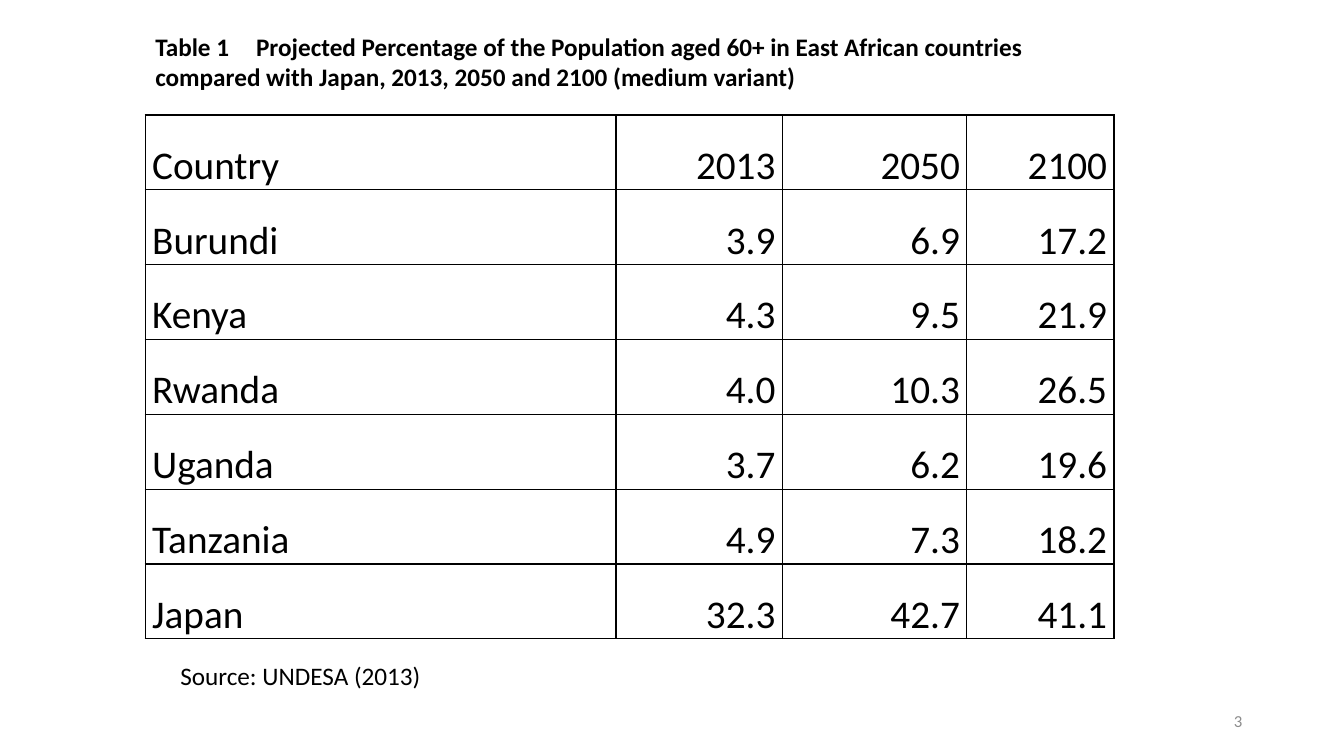
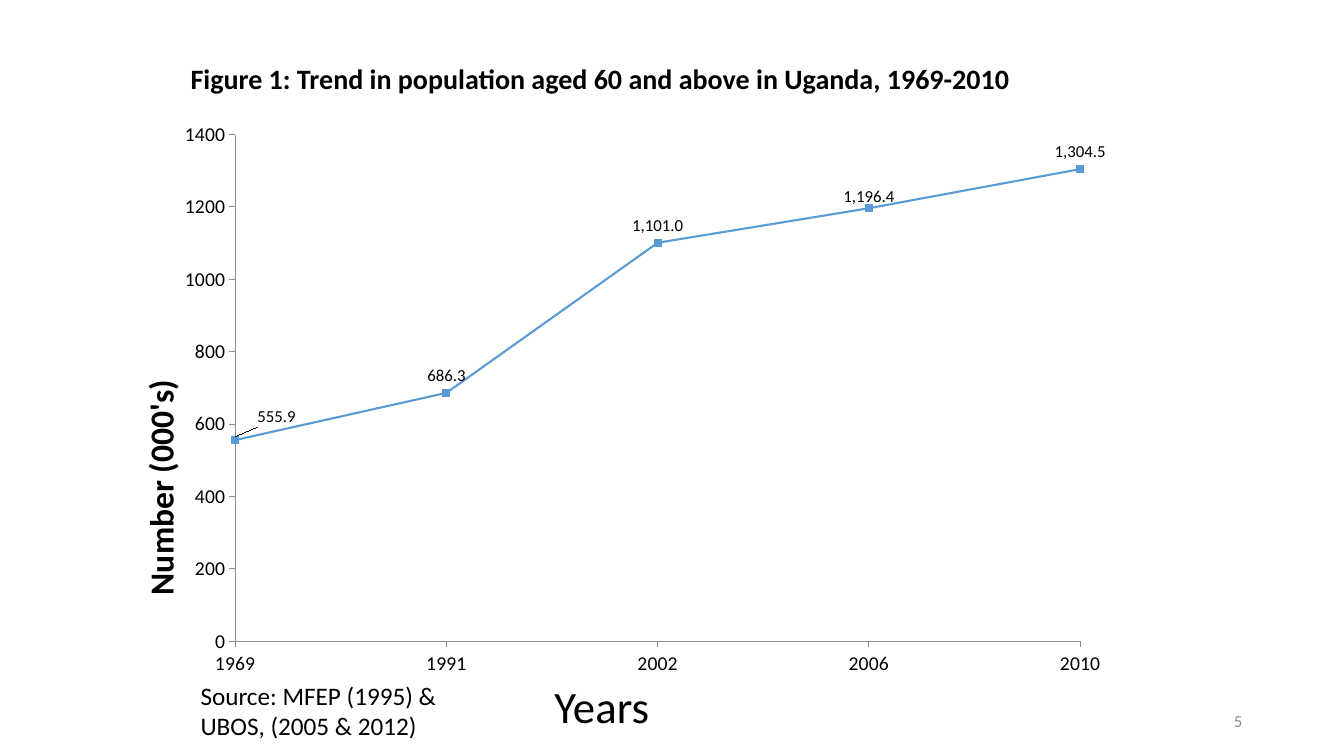
from lxml import etree
from pptx import Presentation
from pptx.chart.data import CategoryChartData
from pptx.dml.color import RGBColor
from pptx.enum import chart as ch, text as tx
from pptx.oxml import parse_xml
from pptx.oxml.ns import nsdecls, qn
from pptx.util import Pt

PX = 9144  # EMU: 100 px to the inch
FONT = "Calibri"
BLACK = RGBColor(0x00, 0x00, 0x00)
GREY = RGBColor(0x8C, 0x8C, 0x8C)
BLUE = RGBColor(0x5B, 0x9B, 0xD5)
LEFT, RIGHT = tx.PP_ALIGN.LEFT, tx.PP_ALIGN.RIGHT
TOP, MIDDLE = tx.MSO_ANCHOR.TOP, tx.MSO_ANCHOR.MIDDLE

COLS = [467, 165, 183, 146]
ROWS = [
    ("Country", "2013", "2050", "2100"),
    ("Burundi", "3.9", "6.9", "17.2"),
    ("Kenya", "4.3", "9.5", "21.9"),
    ("Rwanda", "4.0", "10.3", "26.5"),
    ("Uganda", "3.7", "6.2", "19.6"),
    ("Tanzania", "4.9", "7.3", "18.2"),
    ("Japan", "32.3", "42.7", "41.1"),
]
TREND = {"1969": 555.9, "1991": 686.3, "2002": 1101, "2006": 1196.4, "2010": 1304.5}
SHIFTS = {0: (0.04, -0.01), 3: (0, 0.01)}  # labels moved off the line


def emu(*sizes):
    return [size * PX for size in sizes]


def style(font, size, color=BLACK, bold=False):
    for key, value in {"name": FONT, "size": Pt(size), "bold": bold}.items():
        setattr(font, key, value)
    font.color.rgb = color


def write(frame, words, size, color=BLACK, bold=False, align=LEFT, anchor=TOP):
    frame.text = words
    frame.word_wrap = True
    frame.auto_size = tx.MSO_AUTO_SIZE.NONE
    frame.vertical_anchor = anchor
    for para in frame.paragraphs:
        para.alignment = align
        for run in para.runs:
            style(run.font, size, color, bold)


def note(slide, box, words, size, **look):
    shape = slide.shapes.add_textbox(*emu(*box))
    write(shape.text_frame, words, size, **look)


def page(deck, box, title, size, number):
    """Add a slide with its title and page number."""
    slide = deck.slides.add_slide(deck.slide_layouts[5])
    head = slide.shapes.title
    head.left, head.top, head.width, head.height = emu(*box)
    write(head.text_frame, title, size, bold=True)
    note(slide, (942, 695, 300, 40), number, 12, color=GREY, align=RIGHT, anchor=MIDDLE)
    return slide


def frame(cell):
    """Clear the cell's fill and draw a thin line on its four sides."""
    cell.fill.background()
    props = cell._tc.get_or_add_tcPr()
    for spot, side in enumerate("LRTB"):
        props.insert(spot, parse_xml(
            f'<a:ln{side} {nsdecls("a")} w="12700"><a:solidFill>'
            f'<a:srgbClr val="{BLACK}"/></a:solidFill></a:ln{side}>'))


def grid(slide, box, cols, rows):
    table = slide.shapes.add_table(len(rows), len(cols), *emu(*box)).table
    table.first_row = table.horz_banding = False
    for col, width in zip(table.columns, cols):
        col.width = width * PX
    for row, words in zip(table.rows, rows):
        row.height = box[3] * PX // len(rows)
        for spot, (cell, word) in enumerate(zip(row.cells, words)):
            write(cell.text_frame, word, 28, align=RIGHT if spot else LEFT)
            para = cell.text_frame.paragraphs[0]
            para.line_spacing, para.space_after = 1.07, Pt(8)
            cell.vertical_anchor = tx.MSO_ANCHOR.BOTTOM
            cell.margin_left = cell.margin_right = 7 * PX
            cell.margin_top = cell.margin_bottom = 0
            frame(cell)


def place(node, after=None, **parts):
    """Give a chart part a manual layout, first or after the named child."""
    for old in node.findall(qn("c:layout")):
        node.remove(old)
    layout = etree.Element(qn("c:layout"))
    manual = etree.SubElement(layout, qn("c:manualLayout"))
    for key, value in parts.items():
        etree.SubElement(manual, qn("c:" + key)).set("val", str(value))
    if after:
        node.find(qn(after)).addnext(layout)
    else:
        node.insert(0, layout)


def rule(axis):
    axis.has_major_gridlines = False
    axis.major_tick_mark = ch.XL_TICK_MARK.OUTSIDE
    axis.minor_tick_mark = ch.XL_TICK_MARK.NONE
    axis.format.line.color.rgb = GREY
    axis.format.line.width = Pt(0.75)
    style(axis.tick_labels.font, 14)


def scale(axis):
    """Set up the value axis, its title and its crossing on the first point."""
    axis.minimum_scale, axis.maximum_scale, axis.major_unit = 0, 1400, 200
    axis.tick_labels.number_format = "General"
    axis.tick_labels.number_format_is_linked = False
    title = axis.axis_title
    title.text_frame.text = "Number (000's)"
    style(title.text_frame.paragraphs[0].runs[0].font, 24, bold=True)
    body = title.text_frame._txBody.find(qn("a:bodyPr"))
    body.set("rot", "-5400000")
    body.set("vert", "horz")
    place(title._element, "c:tx", xMode="edge", yMode="edge", x=0.05, y=0.46)
    node = axis._element
    for old in node.findall(qn("c:crossBetween")):
        node.remove(old)
    cross = etree.Element(qn("c:crossBetween"), val="midCat")
    node.find(qn("c:crosses")).addnext(cross)


def tag(line):
    """Label the points of the line."""
    labels = line.data_labels
    labels.show_value = True
    labels.number_format, labels.number_format_is_linked = "#,##0.0", False
    labels.position = ch.XL_LABEL_POSITION.ABOVE
    style(labels.font, 12)
    for spot, (x, y) in SHIFTS.items():
        label = line.points[spot].data_label
        label.position = ch.XL_LABEL_POSITION.ABOVE
        style(label.font, 12)
        place(label._dLbl if hasattr(label, "_dLbl") else label._get_or_add_dLbl(),
              "c:idx", x=x, y=y)


def graph(slide, box, points):
    data = CategoryChartData(number_format="#,##0.0")
    data.categories = list(points)
    data.add_series("Series 1", list(points.values()))
    kind = ch.XL_CHART_TYPE.LINE_MARKERS
    chart = slide.shapes.add_chart(kind, *emu(*box), data).chart
    chart.has_legend = chart.has_title = False
    style(chart.font, 10)
    rule(chart.category_axis)
    rule(chart.value_axis)
    scale(chart.value_axis)
    place(chart._chartSpace.chart.plotArea, layoutTarget="inner", xMode="edge",
          yMode="edge", x=0.15, y=0.03, w=0.82, h=0.91)
    plot = chart.plots[0]
    plot.vary_by_categories = False
    line = plot.series[0]
    line.smooth = False
    line.format.line.color.rgb = BLUE
    line.format.line.width = Pt(1.5)
    mark = line.marker
    mark.style, mark.size = ch.XL_MARKER_STYLE.SQUARE, 5
    mark.format.fill.solid()
    mark.format.fill.fore_color.rgb = BLUE
    mark.format.line.color.rgb = BLUE
    tag(line)


def main():
    deck = Presentation()
    deck.slide_width, deck.slide_height = emu(1333, 750)

    slide = page(
        deck, (144, 26, 930, 71),
        "Table 1\tProjected Percentage of the Population aged 60+ in East African countries\n"
        "compared with Japan, 2013, 2050 and 2100 (medium variant)", 18, "3")
    grid(slide, (144, 114, sum(COLS), 520), COLS, ROWS)
    note(slide, (169, 650, 322, 40), "Source: UNDESA (2013)", 18)

    slide = page(
        deck, (179, 56, 867, 74),
        "Figure 1: Trend in population aged 60 and above in Uganda, 1969-2010", 20, "5")
    graph(slide, (80, 117, 1022, 553), TREND)
    note(slide, (540, 668, 125, 64), "Years", 32)
    note(slide, (189, 670, 269, 71), "Source: MFEP (1995) & UBOS, (2005 & 2012)", 18)

    deck.save("out.pptx")


if __name__ == "__main__":
    main()
